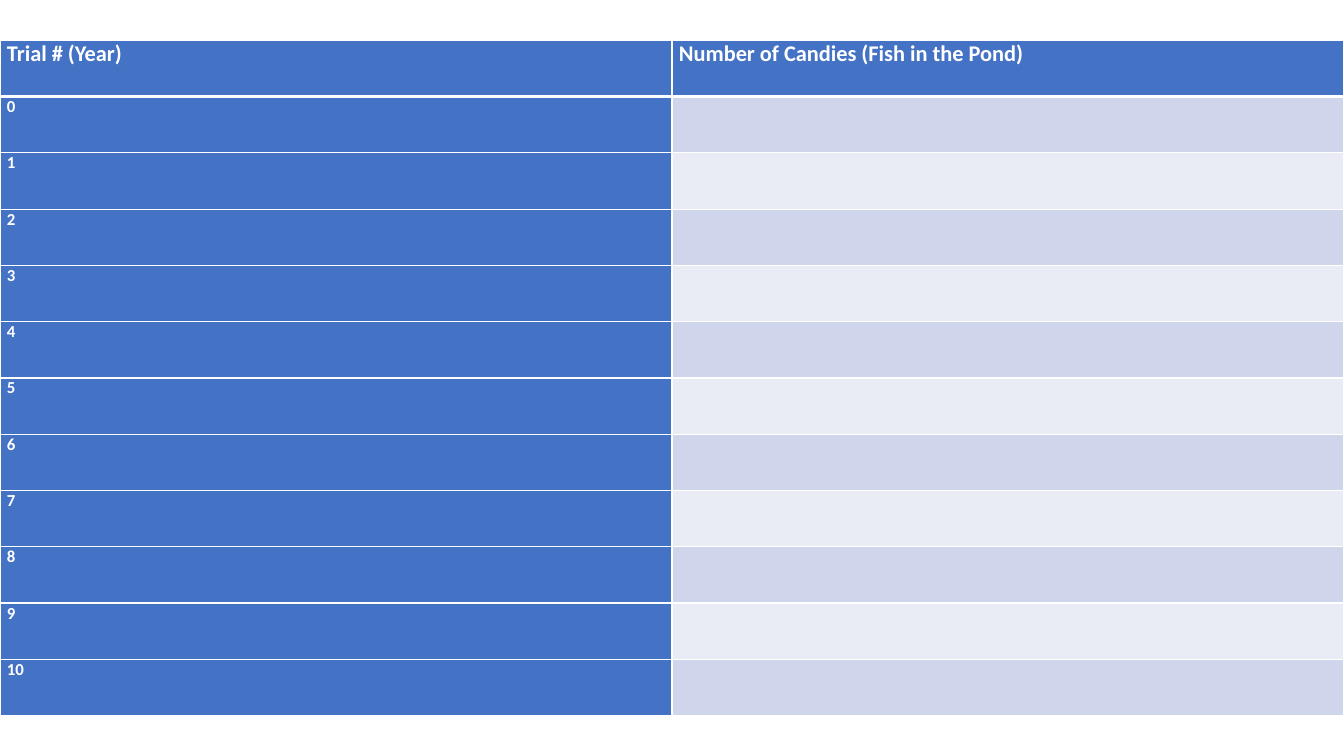
"""Build a slide with a blank data table for a fish pond simulation."""
from dataclasses import dataclass

import pptx
import pptx.dml.color
import pptx.oxml.ns
import pptx.table
import pptx.util
from lxml import etree

Pt = pptx.util.Pt
RGBColor = pptx.dml.color.RGBColor
qn = pptx.oxml.ns.qn

BLUE = RGBColor(0x44, 0x72, 0xC4)
BAND_DARK = RGBColor(0xCF, 0xD5, 0xEA)
BAND_LIGHT = RGBColor(0xE9, 0xEB, 0xF5)
WHITE = RGBColor(0xFF, 0xFF, 0xFF)

SLIDE_W, SLIDE_H = 960, 540
TABLE_TOP, ROW_H = 28.8, 40.2
LAST_YEAR = 10
HEADINGS = ("Trial # (Year)", "Number of Candies (Fish in the Pond)")


@dataclass
class CellStyle:
    fill: RGBColor
    size: float = 12
    top: float = 1
    bottom: float = 1


def set_borders(cell: pptx.table._Cell, style: CellStyle) -> None:
    tc_pr = cell._tc.get_or_add_tcPr()
    widths = {"a:lnL": 1, "a:lnR": 1, "a:lnT": style.top, "a:lnB": style.bottom}
    for tag, width in widths.items():
        ln = etree.SubElement(tc_pr, qn(tag), w=str(Pt(width)))
        fill = etree.SubElement(ln, qn("a:solidFill"))
        etree.SubElement(fill, qn("a:srgbClr"), val=str(WHITE))


def draw_cell(cell: pptx.table._Cell, text: str, style: CellStyle) -> None:
    set_borders(cell, style)
    cell.fill.solid()
    cell.fill.fore_color.rgb = style.fill
    cell.margin_left = cell.margin_right = Pt(5)
    cell.margin_top = cell.margin_bottom = Pt(0)
    if text:
        r = cell.text_frame.paragraphs[0].add_run()
        r.text = text
        r.font.name = "Calibri"
        r.font.size = Pt(style.size)
        r.font.bold = True
        r.font.color.rgb = WHITE


def main() -> None:
    prs = pptx.Presentation()
    prs.slide_width, prs.slide_height = Pt(SLIDE_W), Pt(SLIDE_H)
    s = prs.slides.add_slide(prs.slide_layouts[6])

    n_rows = LAST_YEAR + 2
    table = s.shapes.add_table(
        n_rows, 2, Pt(0), Pt(TABLE_TOP), Pt(SLIDE_W), Pt(n_rows * ROW_H)
    ).table
    for column in table.columns:
        column.width = Pt(SLIDE_W / 2)
    for row in table.rows:
        row.height = Pt(ROW_H)

    for col, heading in enumerate(HEADINGS):
        draw_cell(table.cell(0, col), heading, CellStyle(BLUE, size=16, bottom=3))
    for year in range(LAST_YEAR + 1):
        top = 3 if year == 0 else 1
        band = BAND_LIGHT if year % 2 else BAND_DARK
        draw_cell(table.cell(year + 1, 0), str(year), CellStyle(BLUE, top=top))
        draw_cell(table.cell(year + 1, 1), "", CellStyle(band, top=top))

    prs.save("out.pptx")


if __name__ == "__main__":
    main()
